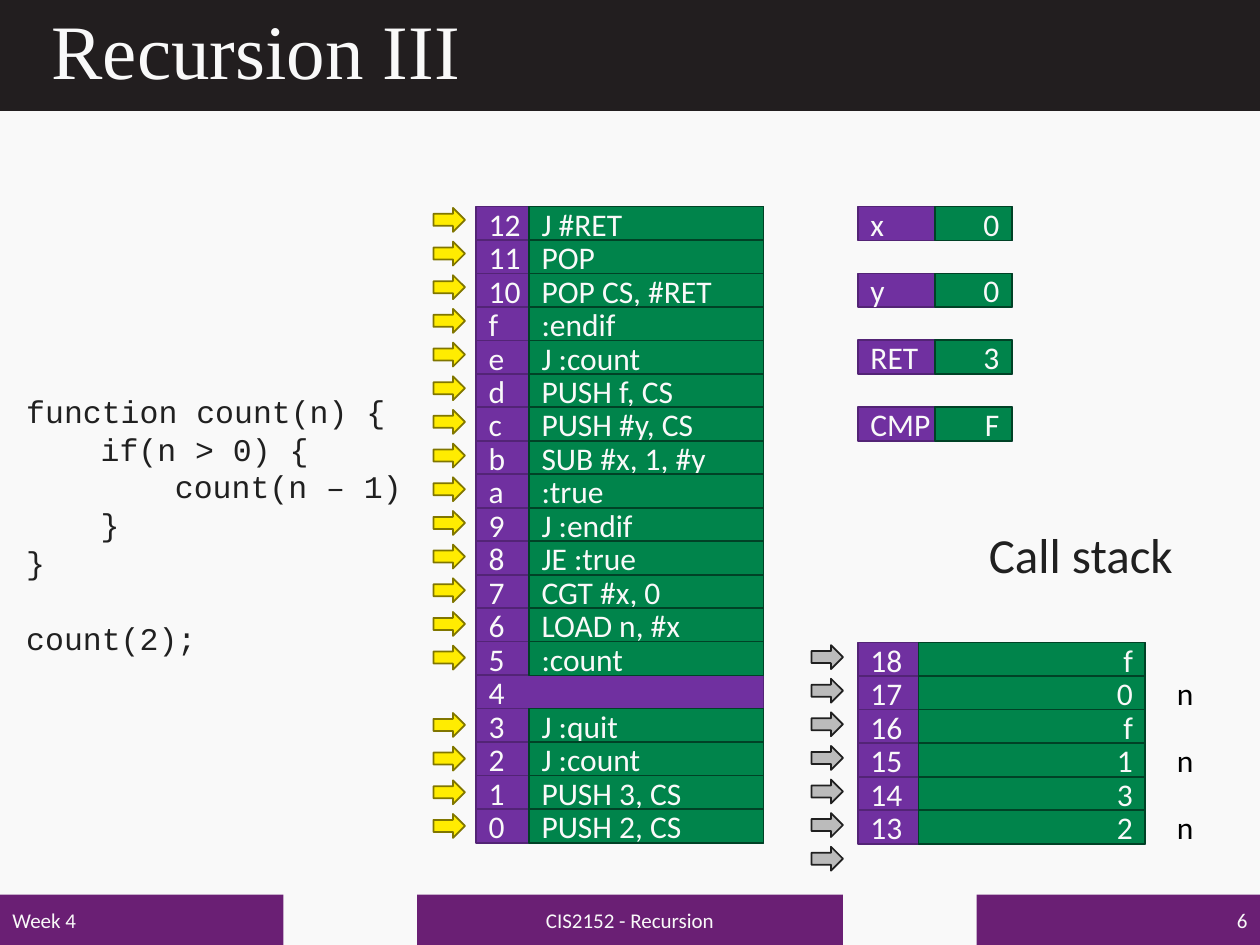
"""Build the recursion slide: code, program memory, registers and call stack."""
from dataclasses import dataclass

from lxml.etree import SubElement
from pptx import Presentation
from pptx.dml.color import RGBColor
from pptx.enum.shapes import MSO_SHAPE
from pptx.enum.text import MSO_ANCHOR, PP_ALIGN
from pptx.oxml.ns import qn
from pptx.util import Inches, Pt


@dataclass(frozen=True)
class Theme:
    """Colours, as fill and line pairs where outlined, fonts and sizes."""
    paper: str = "F9F9F9"
    ink: str = "202020"
    black: str = "000000"
    bar: str = "221E1F"
    foot: str = "6A1F74"
    key: tuple = ("7030A0", "532476")
    cell: tuple = ("00844B", "004226")
    gold: tuple = ("FFEC01", "807600")
    grey: tuple = ("BBBBBB", "202020")
    sans: str = "Calibri"
    mono: str = "Courier New"
    serif: str = "Times New Roman"
    small: int = 12
    body: int = 18
    large: int = 28
    head: int = 44


THEME = Theme()
LEFT, MID, RIGHT = PP_ALIGN.LEFT, PP_ALIGN.CENTER, PP_ALIGN.RIGHT
ROW = 0.27

PROGRAM = [
    ("12", "J #RET"), ("11", "POP"), ("10", "POP CS, #RET"), ("f", ":endif"),
    ("e", "J :count"), ("d", "PUSH f, CS"), ("c", "PUSH #y, CS"),
    ("b", "SUB #x, 1, #y"), ("a", ":true"), ("9", "J :endif"),
    ("8", "JE :true"), ("7", "CGT #x, 0"), ("6", "LOAD n, #x"),
    ("5", ":count"), ("4", ""), ("3", "J :quit"), ("2", "J :count"),
    ("1", "PUSH 3, CS"), ("0", "PUSH 2, CS"),
]
REGS = [("x", "0"), ("y", "0"), ("RET", "3"), ("CMP", "F")]
STACK = [("18", "f"), ("17", "0"), ("16", "f"),
         ("15", "1"), ("14", "3"), ("13", "2")]
CODE = ["function count(n) {", "\tif(n > 0) {", "\t\tcount(n – 1)",
        "\t}", "}", "count(2);"]


def spread(first, last, count):
    """Return evenly spaced positions from first to last."""
    return [first + (last - first) * i / (count - 1) for i in range(count)]


def style(para, size, color, face=THEME.sans, align=LEFT):
    """Set the font and alignment of a paragraph."""
    para.alignment = align
    para.font.size = Pt(size)
    para.font.name = face
    para.font.color.rgb = RGBColor.from_string(color)


def add_form(slide, box, fill, line=None, kind=MSO_SHAPE.RECTANGLE):
    """Add a flat filled shape, outlined if a line colour is given."""
    form = slide.shapes.add_shape(kind, *map(Inches, box))
    form.shadow.inherit = False
    form.fill.solid()
    form.fill.fore_color.rgb = RGBColor.from_string(fill)
    if line:
        form.line.color.rgb = RGBColor.from_string(line)
        form.line.width = Pt(1)
    else:
        form.line.fill.background()
    return form


def add_cell(slide, box, text, tone, size=THEME.body, align=LEFT):
    """Add a rectangle with one line of light text."""
    frame = add_form(slide, box, *tone).text_frame
    frame.vertical_anchor = MSO_ANCHOR.MIDDLE
    frame.paragraphs[0].text = text
    style(frame.paragraphs[0], size, THEME.paper, align=align)


def add_label(slide, box, text, size, color, align=LEFT,
              anchor=MSO_ANCHOR.TOP, wrap=True):
    """Add a text box with one line."""
    frame = slide.shapes.add_textbox(*map(Inches, box)).text_frame
    frame.word_wrap = wrap
    frame.vertical_anchor = anchor
    frame.paragraphs[0].text = text
    style(frame.paragraphs[0], size, color, align=align)


def add_pairs(slide, pairs, tops, left, split, right, align=LEFT):
    """Add rows of a key bar with a value cell over its right part."""
    for (key, _), top in zip(pairs, tops):
        add_cell(slide, (left, top, right - left, ROW), key, THEME.key)
    for (_, value), top in zip(pairs, tops):
        if value:
            box = (split, top, right - split, ROW)
            add_cell(slide, box, value, THEME.cell, align=align)


def add_arrows(slide, left, tops, tone):
    """Add a column of right arrows."""
    for top in tops:
        add_form(slide, (left, top, 0.25, 0.19), *tone,
                 kind=MSO_SHAPE.RIGHT_ARROW)


def add_code(slide, box, lines):
    """Add the code listing with tab stops and a gap before the call."""
    frame = slide.shapes.add_textbox(*map(Inches, box)).text_frame
    frame.word_wrap = True
    for i, line in enumerate(lines):
        para = frame.add_paragraph() if i else frame.paragraphs[0]
        para.text = line
        style(para, THEME.body, THEME.ink, THEME.mono)
        para.line_spacing = Pt(21.6)
        if line == lines[-1]:
            para.space_before = Pt(21.6)
        stops = SubElement(para._p.get_or_add_pPr(), qn("a:tabLst"))
        for n in (1, 2):
            SubElement(stops, qn("a:tab"), pos=str(Inches(0.59 * n)), algn="l")


def add_title(slide, text):
    """Fill the title placeholder and put the dark bar behind it."""
    bar = add_form(slide, (0, 0, 10, 0.88), THEME.bar)
    slide.shapes._spTree.insert(2, bar._element)
    title = slide.shapes.title
    title.left, title.top, title.width, title.height = map(
        Inches, (0.31, 0, 9.39, 0.86))
    frame = title.text_frame
    frame.vertical_anchor = MSO_ANCHOR.MIDDLE
    frame.text = text
    style(frame.paragraphs[0], THEME.head, THEME.paper, THEME.serif)
    frame.paragraphs[0].line_spacing = 0.9


def add_footer(slide):
    """Add the three footer bars."""
    for left, width, text, align in [
            (0, 2.25, "Week 4", LEFT),
            (3.31, 3.38, "CIS2152 - Recursion", MID),
            (7.75, 2.25, "6", RIGHT)]:
        add_cell(slide, (left, 7.1, width, 0.4), text, (THEME.foot,),
                 THEME.small, align)


def main():
    """Build and save the slide."""
    deck = Presentation()
    deck.slide_width, deck.slide_height = Inches(10), Inches(7.5)
    slide = deck.slides.add_slide(deck.slide_layouts[5])
    slide.background.fill.solid()
    slide.background.fill.fore_color.rgb = RGBColor.from_string(THEME.paper)
    add_title(slide, "Recursion III")
    add_footer(slide)

    count = len(PROGRAM)
    add_pairs(slide, PROGRAM, spread(1.64, 6.42, count), 3.78, 4.2, 6.06)
    add_code(slide, (0.11, 3.06, 3.45, 2.22), CODE)
    marks = zip(PROGRAM, spread(1.65, 6.46, count))
    add_arrows(slide, 3.44, [top for (_, op), top in marks if op], THEME.gold)

    tops = spread(5.1, 6.43, len(STACK))
    add_pairs(slide, STACK, tops, 6.81, 7.29, 9.09, RIGHT)
    for top in tops[1::2]:
        add_label(slide, (9.09, top, 0.48, ROW), "n", THEME.body,
                  THEME.black, RIGHT, MSO_ANCHOR.MIDDLE)
    add_arrows(slide, 6.44, spread(5.12, 6.72, len(STACK) + 1), THEME.grey)

    add_pairs(slide, REGS, spread(1.64, 3.23, len(REGS)),
              6.81, 7.42, 8.03, RIGHT)
    add_label(slide, (7.75, 4.11, 1.68, 0.57), "Call stack", THEME.large,
              THEME.ink, wrap=False)
    deck.save("out.pptx")


if __name__ == "__main__":
    main()
